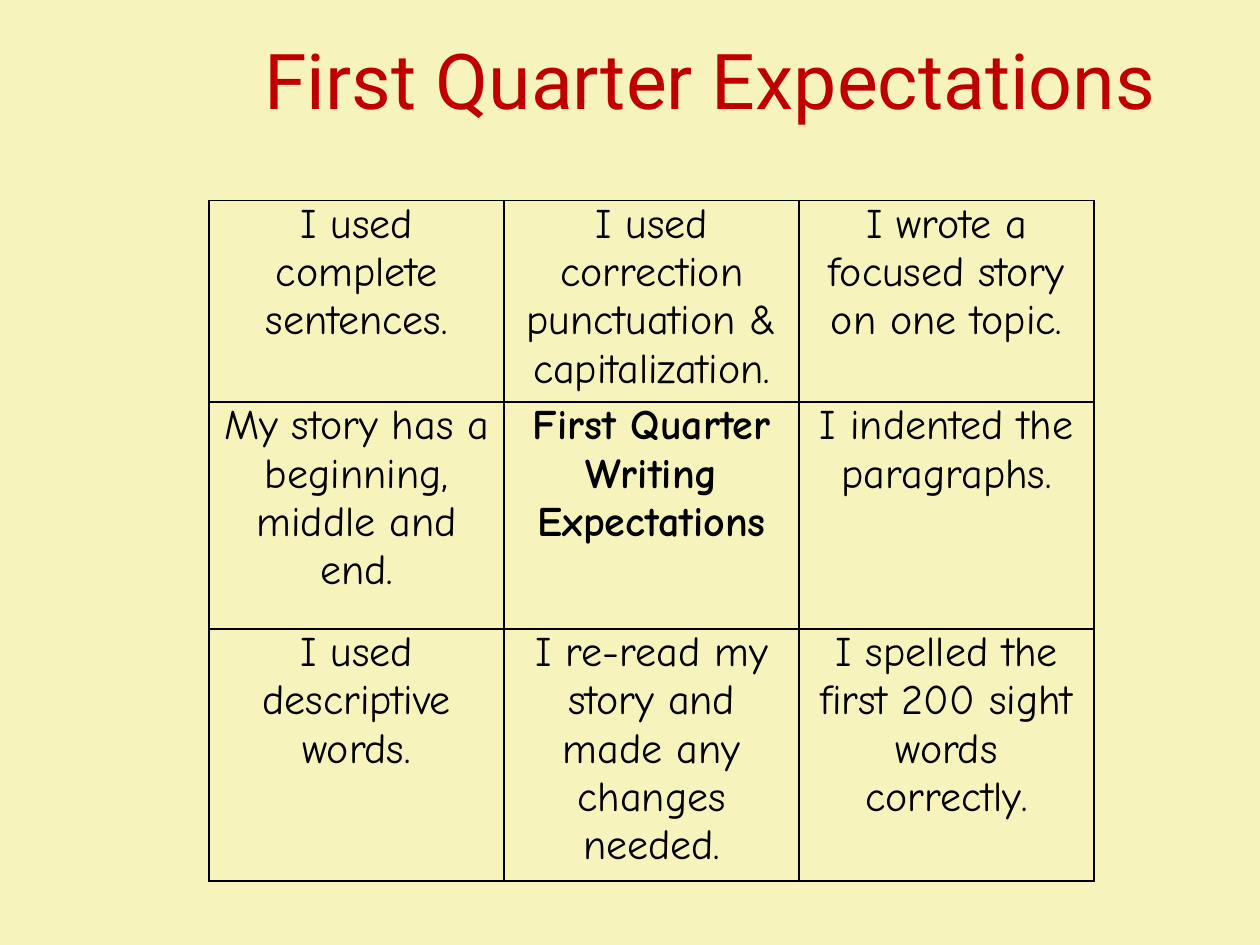
from typing import NamedTuple

from lxml.etree import SubElement
from pptx import Presentation
from pptx.dml.color import RGBColor
from pptx.enum.text import MSO_ANCHOR, PP_ALIGN
from pptx.oxml.ns import qn
from pptx.slide import Slide
from pptx.table import _Cell
from pptx.text.text import TextFrame
from pptx.util import Pt

BACKGROUND = "F7F3BD"
TITLE_RED = "C00000"
BLACK = "000000"
COLUMN_WIDTH = 168.6
ROW_HEIGHTS = (103.68, 129.6, 129.6)


class Expectation(NamedTuple):
    """One square of the expectations grid."""

    text: str
    bold: bool = False


EXPECTATIONS = (
    (
        Expectation("I used complete sentences."),
        Expectation("I used correction punctuation & capitalization."),
        Expectation("I wrote a focused story on one topic."),
    ),
    (
        Expectation("My story has a beginning, middle and end."),
        Expectation("First Quarter Writing Expectations", bold=True),
        Expectation("I indented the paragraphs."),
    ),
    (
        Expectation("I used descriptive words."),
        Expectation("I re-read my story and made any changes needed."),
        Expectation("I spelled the first 200 sight words correctly."),
    ),
)


def color(hex_value: str) -> RGBColor:
    """Turn a hex string into a colour."""
    return RGBColor.from_string(hex_value)


def write_text(frame: TextFrame, text: str, *, font: str, size: float, fill: str,
               bold: bool = False, align: PP_ALIGN = PP_ALIGN.LEFT) -> None:
    """Write one formatted paragraph into a text frame."""
    frame.word_wrap = True
    paragraph = frame.paragraphs[0]
    paragraph.alignment = align
    run = paragraph.add_run()
    run.text = text
    run.font.name = font
    run.font.size = Pt(size)
    run.font.bold = bold
    run.font.color.rgb = color(fill)


def add_borders(cell: _Cell, width: float, fill: str) -> None:
    """Draw a solid line on all four sides of a cell."""
    properties = cell._tc.get_or_add_tcPr()
    for position, side in enumerate(("a:lnL", "a:lnR", "a:lnT", "a:lnB")):
        line = SubElement(properties, qn(side), w=str(Pt(width)))
        solid = SubElement(line, qn("a:solidFill"))
        SubElement(solid, qn("a:srgbClr"), val=fill)
        properties.insert(position, line)


def draw_cell(cell: _Cell, expectation: Expectation) -> None:
    """Format one grid cell and write its expectation."""
    cell.fill.background()
    cell.margin_left = cell.margin_right = Pt(5)
    cell.margin_top = cell.margin_bottom = Pt(0)
    add_borders(cell, 1, BLACK)
    write_text(cell.text_frame, expectation.text, font="Comic Neue", size=24,
               fill=BLACK, bold=expectation.bold, align=PP_ALIGN.CENTER)


def draw_title(slide: Slide) -> None:
    """Draw the slide title."""
    title = slide.shapes.add_textbox(Pt(144), Pt(0), Pt(539.3), Pt(90))
    title.text_frame.vertical_anchor = MSO_ANCHOR.MIDDLE
    write_text(title.text_frame, "First Quarter Expectations", font="Roboto",
               size=44, fill=TITLE_RED)


def draw_grid(slide: Slide) -> None:
    """Draw the table of writing expectations."""
    column_count = len(EXPECTATIONS[0])
    table = slide.shapes.add_table(
        len(EXPECTATIONS), column_count, Pt(119.5), Pt(114.5),
        Pt(COLUMN_WIDTH * column_count), Pt(sum(ROW_HEIGHTS))).table
    table.first_row = table.horz_banding = False
    for column in table.columns:
        column.width = Pt(COLUMN_WIDTH)
    for row, height, expectations in zip(table.rows, ROW_HEIGHTS, EXPECTATIONS):
        row.height = Pt(height)
        for cell, expectation in zip(row.cells, expectations):
            draw_cell(cell, expectation)


def main() -> None:
    """Build and save the presentation."""
    presentation = Presentation()
    presentation.slide_width, presentation.slide_height = Pt(720), Pt(540)
    slide = presentation.slides.add_slide(presentation.slide_layouts[6])
    slide.background.fill.solid()
    slide.background.fill.fore_color.rgb = color(BACKGROUND)
    draw_title(slide)
    draw_grid(slide)
    presentation.save("out.pptx")


if __name__ == "__main__":
    main()
